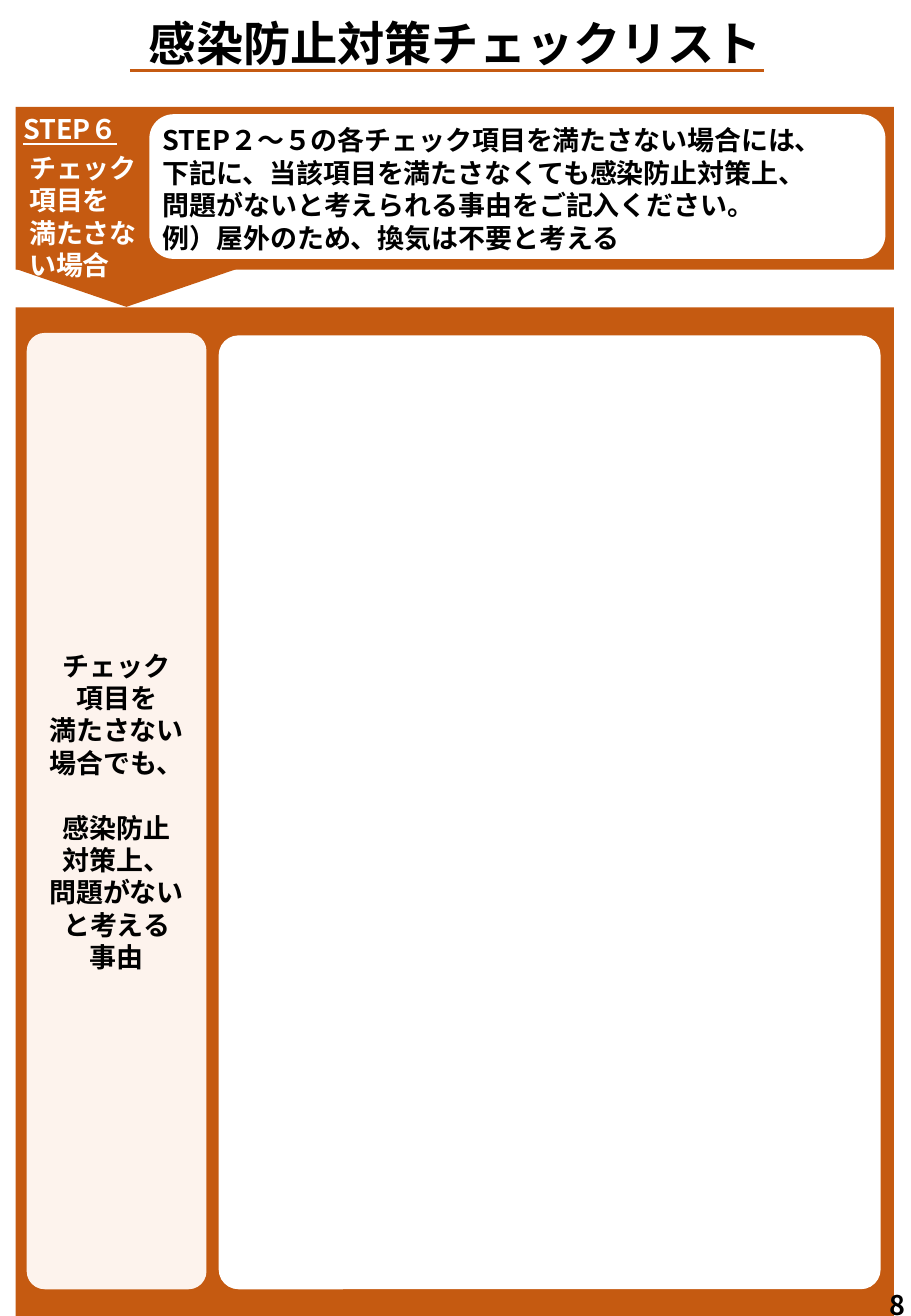
from dataclasses import dataclass

from pptx import Presentation
from pptx import util as u
from pptx.dml.color import RGBColor
from pptx.enum import shapes, text
from pptx.oxml.ns import qn
from lxml import etree


@dataclass(frozen=True)
class Theme:
    font: str = "Noto Sans CJK JP"
    orange: str = "C55A11"
    cream: str = "FDF3ED"
    white: str = "FFFFFF"
    black: str = "000000"
    title_size: float = 28
    body_size: float = 16
    line_ratio: float = 1.2
    rule_width: float = 2.25


@dataclass(frozen=True)
class Box:
    left: float
    top: float
    width: float
    height: float

    def lengths(self) -> list:
        return [u.Inches(n) for n in (self.left, self.top, self.width, self.height)]


@dataclass(frozen=True)
class Panel:
    kind: shapes.MSO_SHAPE
    box: Box
    fill: str
    rounding: float | None = None
    rotation: float = 0


THEME = Theme()
RECTANGLE = shapes.MSO_SHAPE.RECTANGLE
ROUNDED = shapes.MSO_SHAPE.ROUNDED_RECTANGLE

HEADER_PANELS = [
    Panel(shapes.MSO_SHAPE.PENTAGON, Box(0.73, 1.31, 0.62, 1.81), THEME.orange, rotation=90),
    Panel(RECTANGLE, Box(0.13, 0.88, 7.23, 1.34), THEME.orange),
    Panel(ROUNDED, Box(1.23, 0.94, 6.06, 1.19), THEME.white),
]
FORM_BACKGROUND = Panel(RECTANGLE, Box(0.13, 2.53, 7.23, 8.3), THEME.orange)
REASON_LABEL = Panel(ROUNDED, Box(0.22, 2.74, 1.48, 7.87), THEME.cream, rounding=0.1)
ANSWER_AREA = Panel(ROUNDED, Box(1.8, 2.76, 5.45, 7.85), THEME.white, rounding=0.03)

STEP_LINES = ["STEP６", "チェック", "項目を", "満たさな", "い場合"]
INSTRUCTIONS = [
    "STEP２～５の各チェック項目を満たさない場合には、",
    "下記に、当該項目を満たさなくても感染防止対策上、",
    "問題がないと考えられる事由をご記入ください。",
    "例）屋外のため、換気は不要と考える",
]
CONDITION_LINES = ["チェック", "項目を", "満たさない", "場合でも、"]
REASON_LINES = ["感染防止", "対策上、", "問題がない", "と考える", "事由"]


def add_panel(slide, panel: Panel):
    shape = slide.shapes.add_shape(panel.kind, *panel.box.lengths())
    shape.shadow.inherit = False
    shape.fill.solid()
    shape.fill.fore_color.rgb = RGBColor.from_string(panel.fill)
    shape.line.fill.background()
    shape.rotation = panel.rotation
    if panel.rounding is not None:
        shape.adjustments[0] = panel.rounding
    return shape


def write_lines(shape, lines: list[str], size: float = THEME.body_size,
                color: str = THEME.black, align=text.PP_ALIGN.LEFT,
                anchor=text.MSO_ANCHOR.TOP) -> list:
    """Fill a shape with one bold paragraph per line and return the paragraphs."""
    frame = shape.text_frame
    frame.text = "\n".join(lines)
    frame.word_wrap = True
    frame.auto_size = text.MSO_AUTO_SIZE.NONE
    frame.vertical_anchor = anchor
    frame.margin_left = frame.margin_right = frame.margin_top = frame.margin_bottom = 0
    for paragraph in frame.paragraphs:
        paragraph.alignment = align
        paragraph.line_spacing = u.Pt(size * THEME.line_ratio)
        paragraph.space_before = u.Pt(0)
        for run in paragraph.runs:
            run.font.size = u.Pt(size)
            run.font.bold = True
            run.font.name = THEME.font
            run.font.color.rgb = RGBColor.from_string(color)
            east_asian = etree.SubElement(run.font._element, qn("a:ea"))
            east_asian.set("typeface", THEME.font)
    return list(frame.paragraphs)


def add_text(slide, box: Box, lines: list[str], color: str = THEME.black) -> list:
    return write_lines(slide.shapes.add_textbox(*box.lengths()), lines, color=color)


def add_title(slide) -> None:
    title = slide.shapes.title
    title.left, title.top, title.width, title.height = Box(0.48, 0.12, 6.54, 0.47).lengths()
    write_lines(title, ["感染防止対策チェックリスト"], THEME.title_size,
                align=text.PP_ALIGN.CENTER)
    rule = slide.shapes.add_connector(
        shapes.MSO_CONNECTOR.STRAIGHT,
        *[u.Inches(n) for n in (1.07, 0.58, 6.29, 0.58)])
    rule.line.color.rgb = RGBColor.from_string(THEME.orange)
    rule.line.width = u.Pt(THEME.rule_width)
    etree.SubElement(rule._element.spPr, qn("a:effectLst"))


def add_step_header(slide) -> None:
    for panel in HEADER_PANELS:
        add_panel(slide, panel)
    step, *conditions = add_text(slide, Box(0.19, 0.93, 1.02, 1.4), STEP_LINES, THEME.white)
    step.runs[0].font.underline = True
    conditions[0].space_before = u.Pt(3.6)
    for paragraph in conditions:
        paragraph._p.get_or_add_pPr().set("marL", str(u.Inches(0.05)))
    add_text(slide, Box(1.34, 1.02, 5.94, 1.08), INSTRUCTIONS)


def add_reason_form(slide) -> None:
    add_panel(slide, FORM_BACKGROUND)
    paragraphs = write_lines(add_panel(slide, REASON_LABEL), CONDITION_LINES + REASON_LINES,
                             align=text.PP_ALIGN.CENTER, anchor=text.MSO_ANCHOR.MIDDLE)
    reason_start = paragraphs[len(CONDITION_LINES)]
    reason_start.space_before = u.Pt(THEME.body_size * THEME.line_ratio)
    add_panel(slide, ANSWER_AREA)


def main() -> None:
    presentation = Presentation()
    presentation.slide_width = u.Inches(7.5)
    presentation.slide_height = u.Inches(10.83)
    slide = presentation.slides.add_slide(presentation.slide_layouts[5])
    add_title(slide)
    add_step_header(slide)
    add_reason_form(slide)
    add_text(slide, Box(7.32, 10.6, 0.18, 0.22), ["8"])
    presentation.save("out.pptx")


if __name__ == "__main__":
    main()
